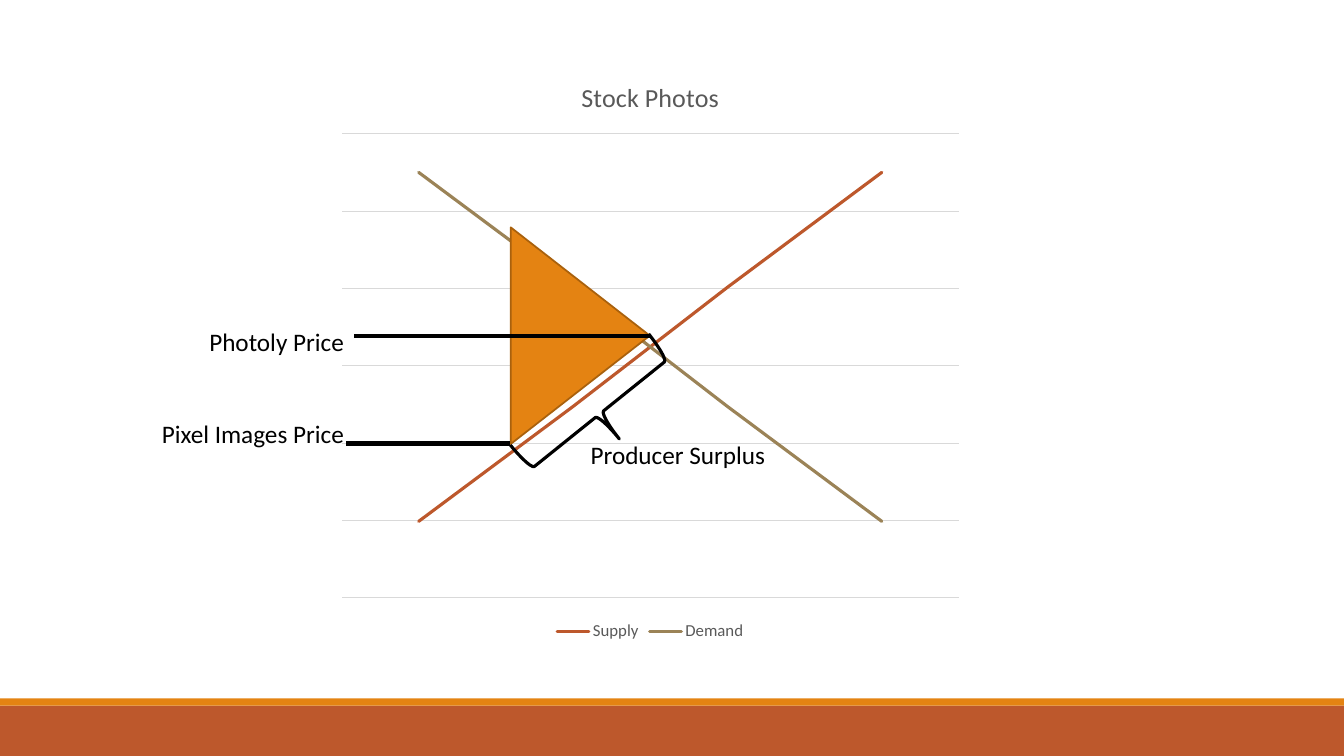
from lxml import etree
from pptx import Presentation
from pptx.chart.data import CategoryChartData
from pptx.dml.color import RGBColor
from pptx.enum.chart import XL_CHART_TYPE as ChartType, XL_LEGEND_POSITION as LegendPosition
from pptx.enum.shapes import MSO_CONNECTOR as Connector, MSO_SHAPE as Shape
from pptx.enum.text import MSO_AUTO_SIZE as AutoSize, PP_ALIGN as Align
from pptx.oxml.ns import qn
from pptx.util import Inches, Pt

COLORS = {
    "rust": "BD582C", "orange": "E48312", "olive": "9B8357", "outline": "A9610D",
    "grid": "D9D9D9", "gray": "595959", "black": "000000",
}
FONT = "Calibri"


def rgb(name):
    return RGBColor.from_string(COLORS[name])


def style_font(font, size, color):
    font.name = FONT
    font.size = Pt(size)
    font.bold = False
    font.color.rgb = rgb(color)


presentation = Presentation()
presentation.slide_width = Inches(13.33)
presentation.slide_height = Inches(7.5)
slide = presentation.slides.add_slide(presentation.slide_layouts[6])
shapes = slide.shapes

for top, height, color in [(7, 0.5, "rust"), (6.93, 0.07, "orange")]:
    band = shapes.add_shape(Shape.RECTANGLE, 0, Inches(top), Inches(13.33), Inches(height))
    band.shadow.inherit = False
    band.fill.solid()
    band.fill.fore_color.rgb = rgb(color)
    band.line.fill.background()

chart_data = CategoryChartData()
chart_data.categories = ["1", "2", "3", "4"]
supply = [18, 45, 73, 100]
chart_data.add_series("Supply", supply)
chart_data.add_series("Demand", supply[::-1])
chart = shapes.add_chart(
    ChartType.LINE, Inches(3.26), Inches(0.57), Inches(6.38), Inches(5.83), chart_data
).chart
style_font(chart.font, 10, "black")
chart.has_title = True
chart.chart_title.text_frame.text = "Stock Photos"
style_font(chart.chart_title.text_frame.paragraphs[0].font, 18.6, "gray")
chart.has_legend = True
chart.legend.position = LegendPosition.BOTTOM
chart.legend.include_in_layout = False
style_font(chart.legend.font, 12, "gray")

chart.category_axis.visible = False
value_axis = chart.value_axis
value_axis.visible = False
value_axis.minimum_scale = 0
value_axis.maximum_scale = 109.08
value_axis.major_unit = 18.18
value_axis.has_major_gridlines = True
value_axis.major_gridlines.format.line.color.rgb = rgb("grid")
value_axis.major_gridlines.format.line.width = Pt(0.75)

plot = chart.plots[0]
plot.vary_by_categories = False
for series, color in zip(plot.series, ["rust", "olive"]):
    series.smooth = False
    series.format.line.color.rgb = rgb(color)
    series.format.line.width = Pt(2.25)
    series.format.line._get_or_add_ln().set("cap", "rnd")

plot_area = chart._chartSpace.chart.plotArea
for old_layout in plot_area.findall(qn("c:layout")):
    plot_area.remove(old_layout)
layout = etree.Element(qn("c:layout"))
manual = etree.SubElement(layout, qn("c:manualLayout"))
for tag, value in [("layoutTarget", "inner"), ("xMode", "edge"), ("yMode", "edge"),
                   ("x", 0.02), ("y", 0.13), ("w", 0.96), ("h", 0.79)]:
    etree.SubElement(manual, qn(f"c:{tag}")).set("val", str(value))
plot_area.insert(0, layout)

surplus = shapes.add_shape(
    Shape.ISOSCELES_TRIANGLE, Inches(4.68), Inches(2.64), Inches(2.15), Inches(1.38))
surplus.rotation = 90
surplus.shadow.inherit = False
surplus.fill.solid()
surplus.fill.fore_color.rgb = rgb("orange")
surplus.line.color.rgb = rgb("outline")
surplus.line.width = Pt(1.25)

for start, end, y in [(5.06, 3.43, 4.4), (6.45, 3.51, 3.33)]:
    price_line = shapes.add_connector(
        Connector.STRAIGHT, Inches(start), Inches(y), Inches(end), Inches(y))
    price_line.line.color.rgb = rgb("black")
    price_line.line.width = Pt(3)
    etree.SubElement(price_line._element.spPr, qn("a:effectLst"))

brace = shapes.add_shape(
    Shape.RIGHT_BRACE, Inches(5.63), Inches(3.23), Inches(0.63), Inches(1.76))
brace.rotation = 51.2
brace.shadow.inherit = False
brace.fill.background()
brace.line.color.rgb = rgb("black")
brace.line.width = Pt(2.25)

labels = [
    (1.33, 3.19, 2.18, 1.31, Align.RIGHT, ["Photoly Price", "Pixel Images Price"]),
    (5.76, 4.31, 2.06, 0.4, Align.LEFT, ["Producer Surplus"]),
]
for left, top, width, height, alignment, lines in labels:
    label = shapes.add_textbox(Inches(left), Inches(top), Inches(width), Inches(height))
    frame = label.text_frame
    frame.word_wrap = True
    frame.auto_size = AutoSize.SHAPE_TO_FIT_TEXT
    frame.text = "\n".join(lines)
    for paragraph in frame.paragraphs:
        paragraph.alignment = alignment
        style_font(paragraph.font, 18, "black")
    for paragraph in frame.paragraphs[1:]:
        paragraph.space_before = Pt(44)

presentation.save("out.pptx")
